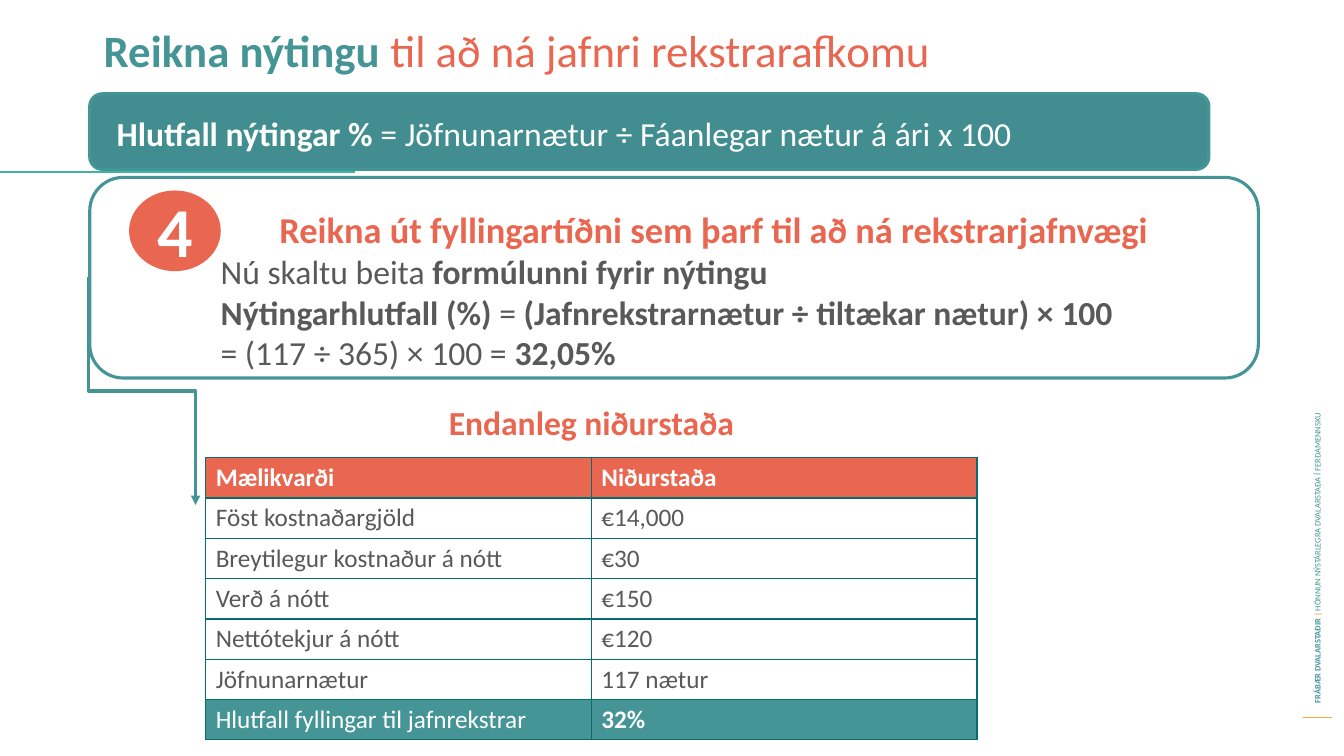
from dataclasses import dataclass
from typing import Optional

from lxml import etree
from pptx import Presentation
from pptx.dml.color import RGBColor
from pptx.enum.shapes import MSO_CONNECTOR, MSO_SHAPE
from pptx.enum.text import MSO_ANCHOR, PP_ALIGN
from pptx.oxml.ns import qn
from pptx.util import Inches, Pt

TEAL = RGBColor(0x45, 0x95, 0x97)
DEEP_TEAL = RGBColor(0x41, 0x8D, 0x8F)
GREEN = RGBColor(0x3F, 0xB5, 0xA1)
BORDER = RGBColor(0x08, 0x6D, 0x6E)
CORAL = RGBColor(0xE9, 0x67, 0x51)
AMBER = RGBColor(0xFB, 0xA6, 0x3D)
GRAY = RGBColor(0x59, 0x59, 0x59)
WHITE = RGBColor(0xFF, 0xFF, 0xFF)
FONT = "Calibri"
LEFT, CENTER = PP_ALIGN.LEFT, PP_ALIGN.CENTER
TOP, MIDDLE = MSO_ANCHOR.TOP, MSO_ANCHOR.MIDDLE
STRAIGHT, ELBOW = MSO_CONNECTOR.STRAIGHT, MSO_CONNECTOR.ELBOW
ROUNDED, OVAL = MSO_SHAPE.FLOWCHART_ALTERNATE_PROCESS, MSO_SHAPE.OVAL


@dataclass
class Span:
    text: str
    bold: Optional[bool] = None
    color: Optional[RGBColor] = None


@dataclass
class Line:
    spans: list[Span]
    size: float
    color: Optional[RGBColor] = None
    bold: Optional[bool] = None
    align: PP_ALIGN = LEFT
    spacing: float = 1.0
    after: float = 0


@dataclass
class TextBlock:
    at: tuple[float, float, float, float]
    lines: list[Line]
    anchor: MSO_ANCHOR = TOP
    rotation: float = 0


@dataclass
class Panel:
    kind: MSO_SHAPE
    at: tuple[float, float, float, float]
    fill: Optional[RGBColor] = None
    line: Optional[RGBColor] = None


def fill_paragraph(para, line: Line) -> None:
    para.alignment = line.align
    para.line_spacing = line.spacing
    para.space_before, para.space_after = Pt(0), Pt(line.after)
    para.font.name, para.font.size = FONT, Pt(line.size)
    if line.bold is not None:
        para.font.bold = line.bold
    if line.color is not None:
        para.font.color.rgb = line.color
    for span in line.spans:
        run = para.add_run()
        run.text = span.text
        if span.bold is not None:
            run.font.bold = span.bold
        if span.color is not None:
            run.font.color.rgb = span.color


def add_text(shapes, block: TextBlock) -> None:
    box = shapes.add_textbox(*map(Inches, block.at))
    box.rotation = block.rotation
    frame = box.text_frame
    frame.word_wrap = True
    frame.vertical_anchor = block.anchor
    for index, line in enumerate(block.lines):
        fill_paragraph(frame.add_paragraph() if index else frame.paragraphs[0], line)


def add_panel(shapes, panel: Panel) -> None:
    shape = shapes.add_shape(panel.kind, *map(Inches, panel.at))
    shape.shadow.inherit = False
    if panel.fill is None:
        shape.fill.background()
    else:
        shape.fill.solid()
        shape.fill.fore_color.rgb = panel.fill
    if panel.line is None:
        shape.line.fill.background()
    else:
        shape.line.color.rgb = panel.line
        shape.line.width = Pt(2.25)


def add_line(shapes, kind, start: tuple[float, float], end: tuple[float, float],
             color: RGBColor, width: float):
    connector = shapes.add_connector(kind, *map(Inches, start + end))
    connector.line.color.rgb = color
    connector.line.width = Pt(width)
    etree.SubElement(connector._element.spPr, qn("a:effectLst"))
    return connector


def add_down_arrow(shapes, start: tuple[float, float], end: tuple[float, float]) -> None:
    """Elbow that leaves and arrives vertically: a mirrored elbow turned by 270 degrees."""
    mid_x, mid_y = (start[0] + end[0]) / 2, (start[1] + end[1]) / 2
    half_w, half_h = (end[1] - start[1]) / 2, (end[0] - start[0]) / 2
    arrow = add_line(shapes, ELBOW, (mid_x + half_w, mid_y - half_h),
                     (mid_x - half_w, mid_y + half_h), TEAL, 2.25)
    arrow._element.spPr.find(qn("a:xfrm")).set("rot", str(270 * 60000))
    etree.SubElement(arrow.line._get_or_add_ln(), qn("a:tailEnd"), type="triangle")


def add_borders(cell) -> None:
    properties = cell._tc.get_or_add_tcPr()
    for index, side in enumerate(("lnL", "lnR", "lnT", "lnB")):
        edge = etree.Element(qn(f"a:{side}"), w=str(Pt(1)))
        paint = etree.SubElement(edge, qn("a:solidFill"))
        etree.SubElement(paint, qn("a:srgbClr"), val=str(BORDER))
        properties.insert(index, edge)


def add_results(shapes, rows: list[tuple[str, str]]) -> None:
    table = shapes.add_table(len(rows), 2, Inches(2.04), Inches(4.54),
                             Inches(7.65), Inches(0.4 * len(rows))).table
    table.first_row = table.horz_banding = False
    last = len(rows) - 1
    fills = {0: CORAL, last: TEAL}
    for r, row in enumerate(rows):
        for c, text in enumerate(row):
            cell = table.cell(r, c)
            cell.vertical_anchor = MIDDLE
            cell.margin_top = cell.margin_bottom = Inches(0.04)
            if r in fills:
                cell.fill.solid()
                cell.fill.fore_color.rgb = fills[r]
            else:
                cell.fill.background()
            add_borders(cell)
            bold = r == 0 or (r == last and c == 1)
            color = WHITE if r in fills else GRAY
            fill_paragraph(cell.text_frame.paragraphs[0], Line([Span(text)], 18, color, bold))


FOOTER = TextBlock((10.18, 4.09, 5.77, 0.2), [Line([
    Span("FRÁBÆR DVALARSTAÐIR ", True, TEAL), Span("| ", True, AMBER),
    Span("HÖNNUN NÝSTÁRLEGRA DVALARSTAÐA Í FERÐAMENNSKU", False, TEAL)], 6)], MIDDLE, 270)
TITLE = TextBlock((0.93, 0.24, 11.61, 0.88), [Line([
    Span("Reikna nýtingu ", True, TEAL),
    Span("til að ná jafnri rekstrarafkomu", False, CORAL)], 32, spacing=0.9)])
STEP = TextBlock((2.09, 2.01, 9.99, 0.88), [
    Line([Span("Reikna út fyllingartíðni sem þarf til að ná rekstrarjafnvægi")],
         26, CORAL, True, CENTER),
    Line([Span("Nú skaltu beita ", False), Span("formúlunni fyrir nýtingu", True)], 24, GRAY),
    Line([Span("Nýtingarhlutfall (%) ", True), Span("= ", False),
          Span("(Jafnrekstrarnætur ÷ tiltækar nætur) × 100", True)], 24, GRAY),
    Line([Span("= (117 ÷ 365) × 100 =", False), Span(" 32,05%", True)], 24, GRAY)])
STEP_NUMBER = TextBlock((1.28, 1.81, 0.91, 0.94),
                        [Line([Span("4")], 50, WHITE, True, CENTER)])
RESULT_HEADING = TextBlock((2.04, 3.94, 7.65, 0.88), [
    Line([Span("Endanleg niðurstaða")], 24, CORAL, True, CENTER, after=6)])
FORMULA = TextBlock((1.06, 1, 10.93, 0.68), [Line([
    Span("Hlutfall nýtingar % ", True),
    Span("= Jöfnunarnætur ÷ Fáanlegar nætur á ári x 100", False)],
    24, WHITE, spacing=0.9, after=12)], MIDDLE)
RESULTS = [
    ("Mælikvarði", "Niðurstaða"),
    ("Föst kostnaðargjöld", "€14,000"),
    ("Breytilegur kostnaður á nótt", "€30"),
    ("Verð á nótt", "€150"),
    ("Nettótekjur á nótt", "€120"),
    ("Jöfnunarnætur", "117 nætur"),
    ("Hlutfall fyllingar til jafnrekstrar", "32%"),
]


def main() -> None:
    deck = Presentation()
    deck.slide_width, deck.slide_height = Inches(13.33), Inches(7.5)
    shapes = deck.slides.add_slide(deck.slide_layouts[6]).shapes
    # Side footer
    add_line(shapes, STRAIGHT, (12.92, 7.12), (13.21, 7.12), AMBER, 0.75)
    add_text(shapes, FOOTER)
    # Title and step panel
    add_panel(shapes, Panel(ROUNDED, (0.89, 1.76, 11.59, 1.99), line=TEAL))
    add_text(shapes, TITLE)
    add_line(shapes, STRAIGHT, (0, 1.71), (3.52, 1.71), GREEN, 1.5)
    add_text(shapes, STEP)
    # Arrow to the result
    add_down_arrow(shapes, (0.88, 2.75), (1.94, 5.01))
    add_text(shapes, RESULT_HEADING)
    # Step number badge
    badge = shapes.add_group_shape().shapes
    add_panel(badge, Panel(OVAL, (1.28, 1.89, 0.91, 0.8), fill=CORAL))
    add_text(badge, STEP_NUMBER)
    # Result table and formula banner
    add_results(shapes, RESULTS)
    add_panel(shapes, Panel(ROUNDED, (0.89, 0.93, 11.1, 0.75), DEEP_TEAL, TEAL))
    add_text(shapes, FORMULA)
    deck.save("out.pptx")


if __name__ == "__main__":
    main()
